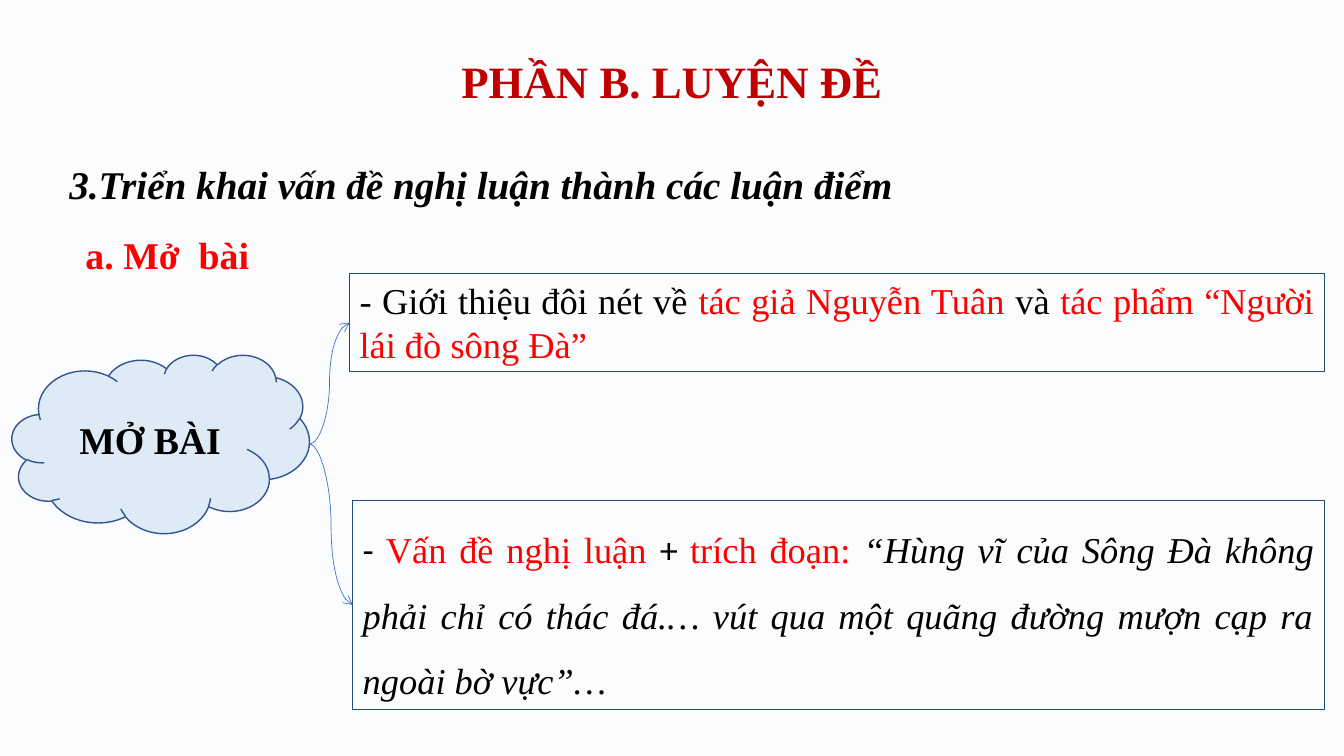
"""Build the essay-introduction slide with a cloud leading to two points."""
from dataclasses import dataclass

from lxml import etree
from pptx import Presentation
from pptx.dml.color import RGBColor
from pptx.enum.shapes import MSO_CONNECTOR, MSO_SHAPE
from pptx.enum.text import MSO_ANCHOR, PP_ALIGN
from pptx.oxml.ns import qn
from pptx.util import Pt

RECT, CLOUD = MSO_SHAPE.RECTANGLE, MSO_SHAPE.CLOUD
CURVE = MSO_CONNECTOR.CURVE
TOP, MIDDLE = MSO_ANCHOR.TOP, MSO_ANCHOR.MIDDLE
CENTER, JUSTIFY = PP_ALIGN.CENTER, PP_ALIGN.JUSTIFY


@dataclass(frozen=True)
class Theme:
    back: RGBColor = RGBColor(0xFB, 0xFC, 0xFE)
    title: RGBColor = RGBColor(0xC0, 0x00, 0x00)
    red: RGBColor = RGBColor(0xFF, 0x00, 0x00)
    ink: RGBColor = RGBColor(0x00, 0x00, 0x00)
    frame: RGBColor = RGBColor(0x1F, 0x4E, 0x79)
    cloud: RGBColor = RGBColor(0xDE, 0xEB, 0xF7)
    edge: RGBColor = RGBColor(0x32, 0x54, 0x91)
    arrow: RGBColor = RGBColor(0x44, 0x72, 0xC4)
    serif: str = "Times New Roman"
    sans: str = "Calibri"
    head: int = 32
    sub: int = 28
    label: int = 27
    body: int = 26


theme = Theme()


def write(shape, runs, size, align, anchor=TOP, space=None, bold=None, wrap=True):
    frame = shape.text_frame
    frame.word_wrap = wrap
    frame.vertical_anchor = anchor
    para = frame.paragraphs[0]
    para.alignment = align
    para.line_spacing = space
    para.font.size = Pt(size)
    para.font.bold = bold
    para.font.name = theme.serif
    for text, color, face, slant in runs:
        run = para.add_run()
        run.text = text
        run.font.color.rgb = color
        run.font.name = face
        run.font.italic = slant


def draw(kind, box, line, width, fill=None):
    shape = slide.shapes.add_shape(kind, *map(Pt, box))
    shape.shadow.inherit = False
    if fill is None:
        shape.fill.background()
    else:
        shape.fill.solid()
        shape.fill.fore_color.rgb = fill
    shape.line.color.rgb = line
    shape.line.width = Pt(width)
    return shape


deck = Presentation()
deck.slide_width, deck.slide_height = Pt(960), Pt(540)
slide = deck.slides.add_slide(deck.slide_layouts[6])
slide.background.fill.solid()
slide.background.fill.fore_color.rgb = theme.back

serif, sans = theme.serif, theme.sans
heads = [
    ((66, 29, 828, 62), "PHẦN B. LUYỆN ĐỀ", theme.title, theme.head,
     CENTER, MIDDLE, 0.9, None, True),
    ((42.5, 94.3, 862.6, 51.8), "3.Triển khai vấn đề nghị luận thành các luận điểm",
     theme.ink, theme.sub, JUSTIFY, TOP, 1.5, True, True),
    ((53.3, 162, 132.5, 40.3), "a. Mở  bài", theme.red, theme.label,
     CENTER, TOP, None, None, False),
]
for box, text, color, size, align, anchor, space, slant, wrap in heads:
    write(slide.shapes.add_textbox(*map(Pt, box)), [(text, color, serif, slant)],
          size, align, anchor, space, True, wrap)

cloud = draw(CLOUD, (8.6, 253.4, 212.4, 127.4), theme.edge, 1, theme.cloud)
write(cloud, [("MỞ BÀI", theme.ink, serif, None)], theme.label, CENTER, MIDDLE, bold=True)

points = [
    ((249.8, 195.1, 696.2, 70.6), None, [
        ("- Giới thiệu đôi nét về ", theme.ink, serif, None),
        ("tác giả Nguyễn Tuân ", theme.red, serif, None),
        ("và ", theme.ink, serif, None),
        ("tác phẩm “Người lái đò sông Đà”", theme.red, serif, None),
    ]),
    ((252, 357.6, 694, 149), 1.5, [
        ("- ", theme.ink, sans, None),
        ("Vấn đề nghị luận ", theme.red, serif, None),
        ("+ ", theme.ink, sans, None),
        ("trích đoạn: ", theme.red, serif, None),
        ("“Hùng vĩ của Sông Đà không phải chỉ có thác đá.… vút qua một quãng "
         "đường mượn cạp ra ngoài bờ vực”…", theme.ink, serif, True),
    ]),
]
for box, space, runs in points:
    write(draw(RECT, box, theme.frame, 0.75), runs, theme.body, JUSTIFY, space=space)
    left, top, width, height = box
    link = slide.shapes.add_connector(
        CURVE, Pt(221), Pt(317.3), Pt(left), Pt(top + height / 2))
    link.line.color.rgb = theme.arrow
    link.line.width = Pt(0.5)
    etree.SubElement(link.line._get_or_add_ln(), qn("a:tailEnd"), type="arrow")
    etree.SubElement(link._element.spPr, qn("a:effectLst"))

deck.save("out.pptx")
